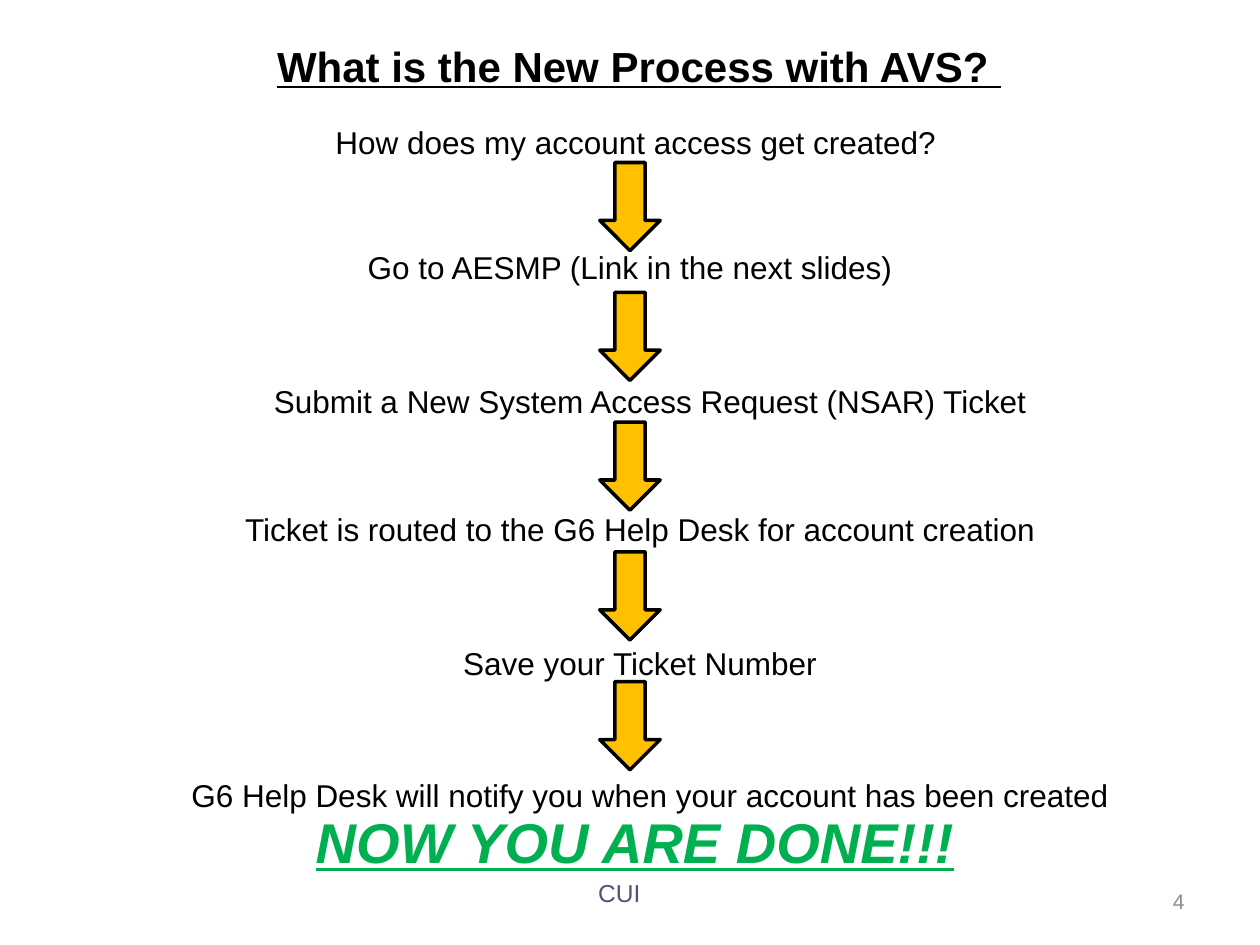
from pptx import Presentation
from pptx import util as u
from pptx.dml.color import RGBColor
from pptx.enum import shapes, text

WIDE, HIGH = 10, 7.5
BLACK, GOLD, GREEN = "000000", "FFC000", "00B050"
PURPLE, GREY = "604A7B", "8C8C8C"
MID, PITCH = 5, 1.03  # arrow axis and row step

# Wording, centre, top and width of each step
STEPS = [
    ("How does my account access get created? ", 5.08, 0.93, 5.27),
    ("Go to AESMP (Link in the next slides)", 5, 1.92, 5.27),
    ("Submit a New System Access Request (NSAR) Ticket", 5.16, 2.98, 6.44),
    ("Ticket is routed to the G6 Help Desk for account creation", 5.08, 4, 6.91),
    ("Save your Ticket Number", 5.08, 5.06, 5.27),
    ("G6 Help Desk will notify you when your account has been created",
     5.16, 6.11, 7.93),
]


def tint(code):
    return RGBColor.from_string(code)


def place(shape, left, top, width, height):
    shape.left, shape.top = u.Inches(left), u.Inches(top)
    shape.width, shape.height = u.Inches(width), u.Inches(height)


def write(shape, words, size, color=BLACK, align=text.PP_ALIGN.CENTER,
          anchor=text.MSO_ANCHOR.TOP, bold=False, slant=False, under=False):
    frame = shape.text_frame
    frame.word_wrap = True
    frame.auto_size = text.MSO_AUTO_SIZE.NONE
    frame.vertical_anchor = anchor
    frame.text = words
    par = frame.paragraphs[0]
    par.alignment = align
    font = par.font
    font.name, font.size = "Arial", u.Pt(size)
    font.bold, font.italic, font.underline = bold, slant, under
    font.color.rgb = tint(color)


def label(slide, words, box, size, **style):
    shape = slide.shapes.add_textbox(*map(u.Inches, box))
    write(shape, words, size, **style)


def arrow(slide, row):
    box = (MID - 0.24, 1.29 + row * PITCH, 0.48, 0.7)
    shape = slide.shapes.add_shape(shapes.MSO_SHAPE.DOWN_ARROW,
                                   *map(u.Inches, box))
    shape.shadow.inherit = False
    shape.fill.solid()
    shape.fill.fore_color.rgb = tint(GOLD)
    shape.line.color.rgb = tint(BLACK)
    shape.line.width = u.Pt(2)


def main():
    deck = Presentation()
    deck.slide_width, deck.slide_height = u.Inches(WIDE), u.Inches(HIGH)
    slide = deck.slides.add_slide(deck.slide_layouts[5])

    # Title
    title = slide.shapes.title
    place(title, 2.08, 0.27, 5.98, 0.5)
    write(title, "What is the New Process with AVS? ", 24,
          bold=True, under=True)

    # Steps, with an arrow between each pair
    for words, center, top, width in STEPS:
        label(slide, words, (center - width / 2, top, width, 0.4), 18)
    for row in range(len(STEPS) - 1):
        arrow(slide, row)

    # Closing line
    label(slide, "NOW YOU ARE DONE!!!", (1.8, 6.36, 6.48, 0.64), 32,
          color=GREEN, bold=True, slant=True, under=True)

    # Footer marking and page number
    label(slide, "CUI", (3, 6.92, 3.83, 0.34), 14, color=PURPLE)
    label(slide, "4", (7.17, 6.95, 2.33, 0.4), 12, color=GREY,
          align=text.PP_ALIGN.RIGHT, anchor=text.MSO_ANCHOR.MIDDLE)

    deck.save("out.pptx")


if __name__ == "__main__":
    main()
